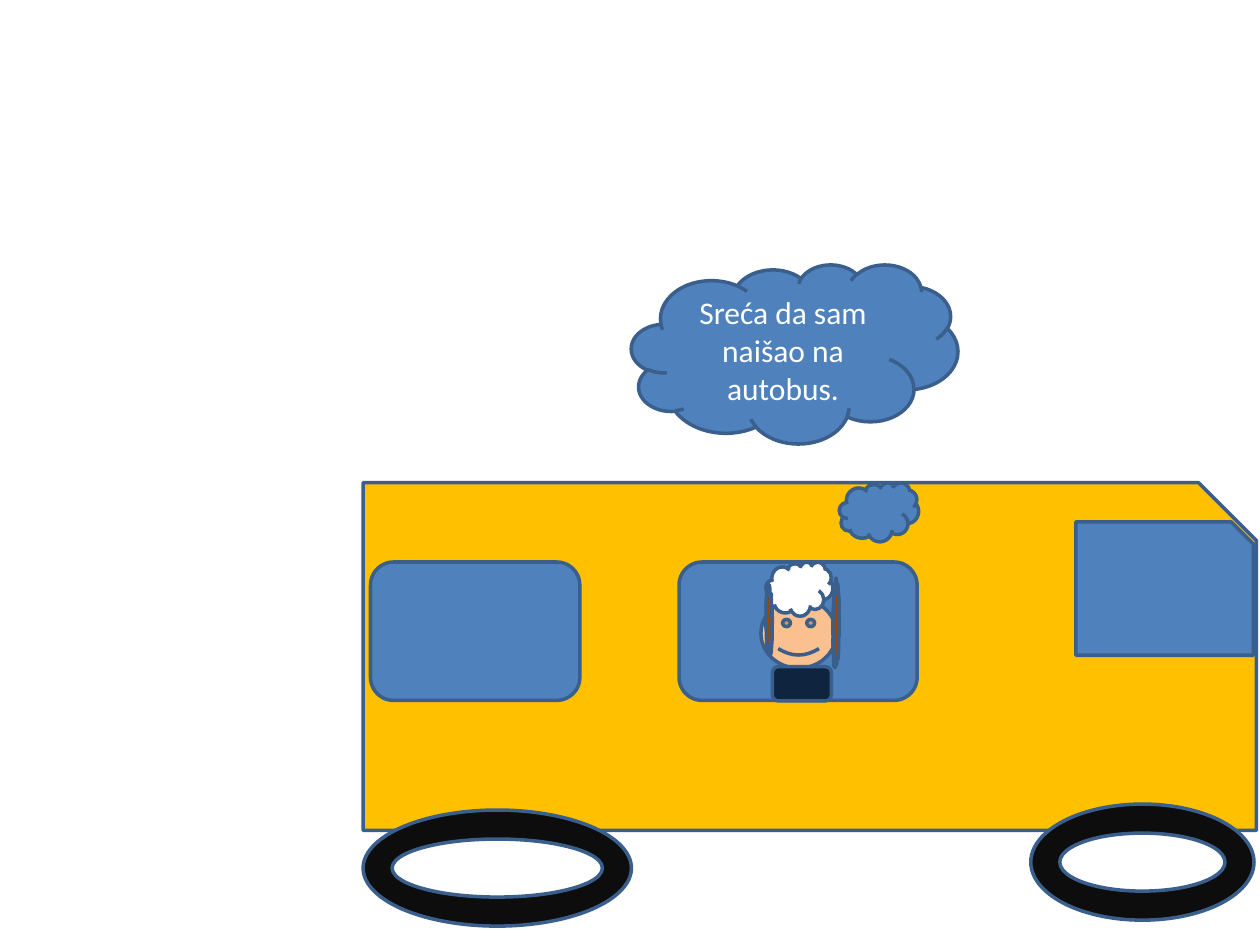
from pptx import Presentation
from pptx.dml.color import RGBColor
from pptx.enum.shapes import MSO_SHAPE as Shape
from pptx.enum.text import MSO_ANCHOR as Anchor, PP_ALIGN as Align
from pptx.util import Cm, Pt

THEME = {
    "blue": "4F81BD", "outline": "3A5F8C", "bus": "FFC000", "tyre": "0D0D0D",
    "skin": "FAC090", "white": "FFFFFF", "brown": "984807", "navy": "0F243E",
    "font": "Calibri", "size": 18, "line": 2,
}

# Each part: preset, fill, (left, top, width, height) in cm
BUS = [
    (Shape.SNIP_1_RECTANGLE, "bus", (7.32, 9.73, 18.01, 7.01)),
    (Shape.DONUT, "tyre", (7.32, 16.33, 5.41, 2.34)),
    (Shape.DONUT, "tyre", (20.78, 16.21, 4.5, 2.34)),
    (Shape.ROUNDED_RECTANGLE, "blue", (13.69, 11.33, 4.8, 2.79)),
    (Shape.ROUNDED_RECTANGLE, "blue", (7.47, 11.33, 4.22, 2.79)),
    (Shape.SNIP_1_RECTANGLE, "blue", (21.69, 10.52, 3.58, 2.69)),
]
PASSENGER = [
    (Shape.SMILEY_FACE, "skin", (15.34, 12.07, 1.52, 1.4)),
    (Shape.CLOUD, "white", (15.44, 11.33, 1.35, 1.09)),
    (Shape.CLOUD, "brown", (16.79, 11.66, 0.13, 1.8), "hv"),
    (Shape.CLOUD, "brown", (15.44, 11.79, 0.13, 1.4), "v"),
    (Shape.ROUNDED_RECTANGLE, "navy", (15.57, 13.44, 1.19, 0.69)),
]
THOUGHT = (Shape.CLOUD, "blue", (12.73, 5.33, 6.58, 3.61))
THOUGHT_TEXT = "Sreća da sam naišao na autobus."
PUFF = (Shape.CLOUD, "blue", (16.92, 9.73, 1.6, 1.19))


def color(name):
    return RGBColor.from_string(THEME[name])


def add_part(slide, preset, fill, box, flip=""):
    sp = slide.shapes.add_shape(preset, *map(Cm, box))
    sp.shadow.inherit = False
    sp.fill.solid()
    sp.fill.fore_color.rgb = color(fill)
    sp.line.color.rgb = color("outline")
    sp.line.width = Pt(THEME["line"])
    for axis in flip:
        sp.element.spPr.xfrm.set("flip" + axis.upper(), "1")
    return sp


def write(sp, text, *, size=THEME["size"], fill="white", align=Align.CENTER):
    tf = sp.text_frame
    tf.word_wrap = True
    tf.vertical_anchor = Anchor.MIDDLE
    p = tf.paragraphs[0]
    p.alignment = align
    r = p.add_run()
    r.text = text
    r.font.name = THEME["font"]
    r.font.size = Pt(size)
    r.font.color.rgb = color(fill)


def main():
    prs = Presentation()
    prs.slide_width, prs.slide_height = Cm(25.4), Cm(19.05)
    slide = prs.slides.add_slide(prs.slide_layouts[6])
    for part in BUS + PASSENGER:
        add_part(slide, *part)
    write(add_part(slide, *THOUGHT), THOUGHT_TEXT)
    add_part(slide, *PUFF)
    prs.save("out.pptx")


if __name__ == "__main__":
    main()
